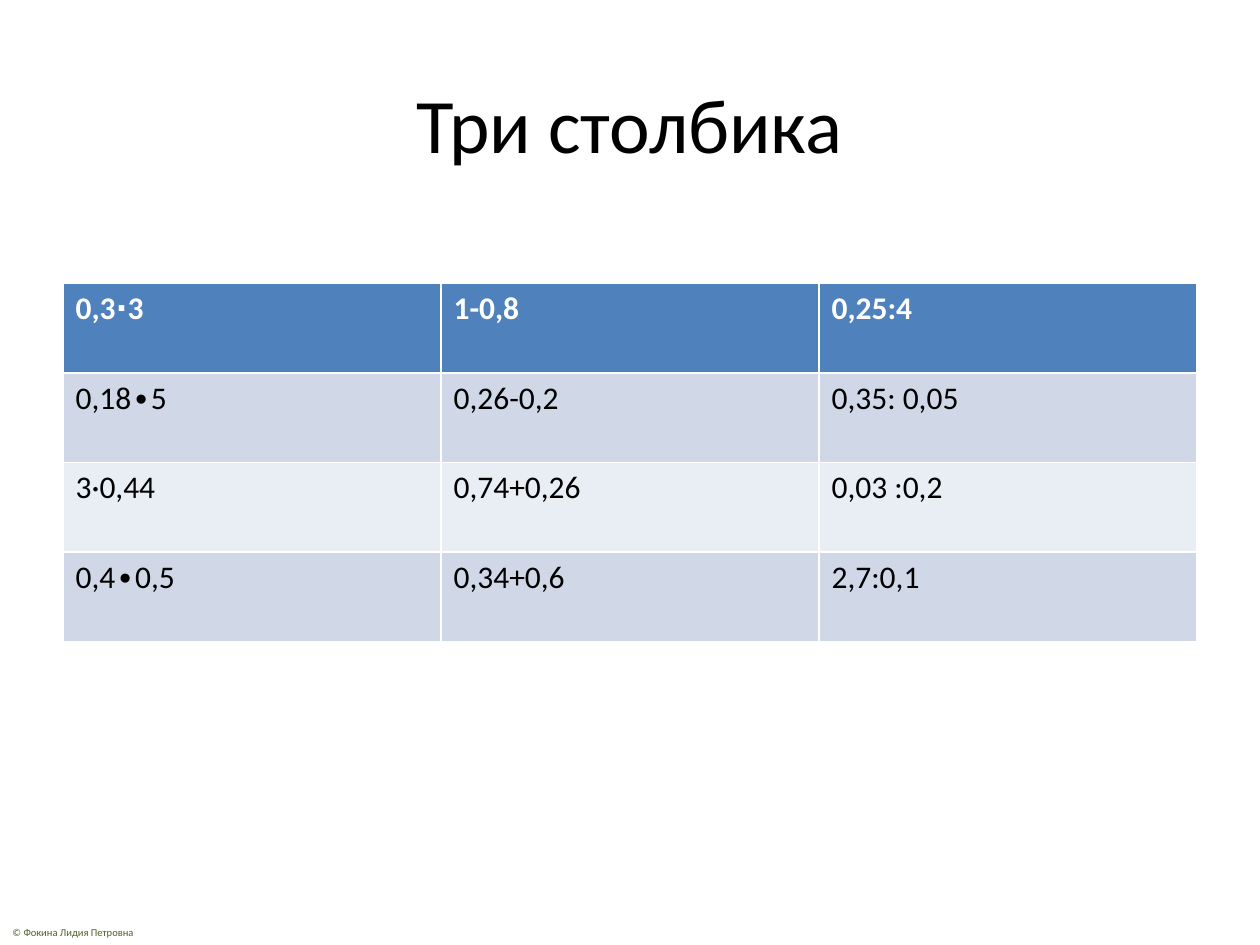
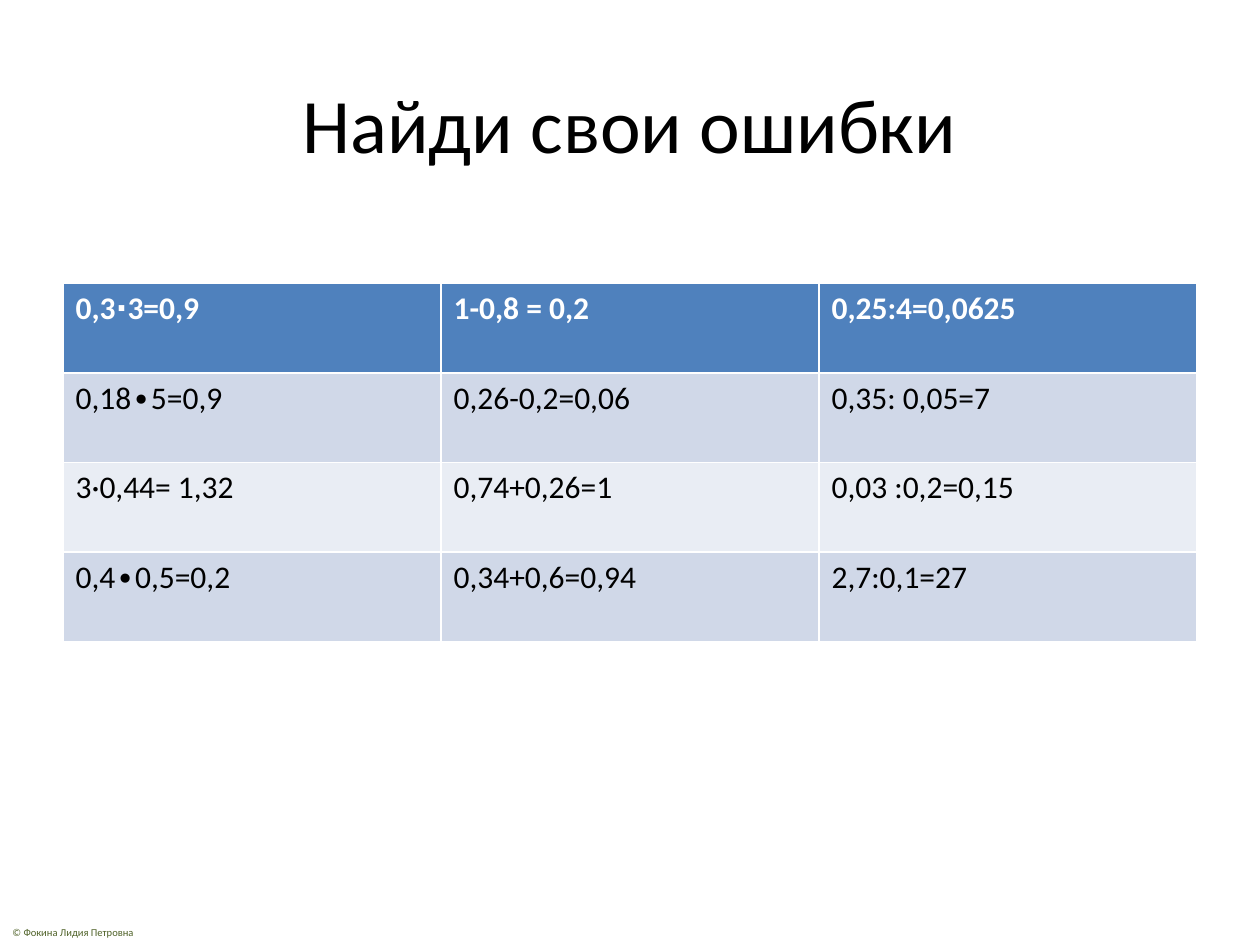
from pptx import Presentation
from pptx.dml.color import RGBColor
from pptx.enum import text as t
from pptx.util import Inches, Pt

FONT = "Calibri"
HEAD, DARK, PALE = "4F81BD", "D0D8E8", "E9EDF4"
WHITE, BLACK, GREEN = "FFFFFF", "000000", "4F6228"

# Boxes: left, top, width, height
TITLE = (0.5, 0.39, 9, 1.16)
GRID = (0.5, 2.25, 9, 2.84)
FOOT = (0, 7.3, 1.19, 0.2)

TASKS = [
    ["0,3∙3", "1-0,8", "0,25:4"],
    ["0,18∙5", "0,26-0,2", "0,35: 0,05"],
    ["3·0,44", "0,74+0,26", "0,03 :0,2"],
    ["0,4∙0,5", "0,34+0,6", "2,7:0,1"],
]
ANSWERS = [
    ["=0,9", " = 0,2", "=0,0625"],
    ["=0,9", "=0,06", "=7"],
    ["= 1,32", "=1", "=0,15"],
    ["=0,2", "=0,94", "=27"],
]


def color(code):
    return RGBColor.from_string(code)


def style(para, size, code, bold=False):
    font = para.font
    font.name, font.size, font.bold = FONT, Pt(size), bold
    font.color.rgb = color(code)


def add_title(slide, box, words):
    title = slide.shapes.title
    title.left, title.top, title.width, title.height = map(Inches, box)
    frame = title.text_frame
    frame.text = words
    frame.vertical_anchor = t.MSO_ANCHOR.MIDDLE
    para = frame.paragraphs[0]
    para.alignment = t.PP_ALIGN.CENTER
    style(para, 44, BLACK)


def add_grid(slide, box, rows):
    # The default table style draws the white rules between cells
    count, width = len(rows), len(rows[0])
    table = slide.shapes.add_table(count, width, *map(Inches, box)).table
    for col in table.columns:
        col.width = Inches(box[2] / width)
    for i, row in enumerate(rows):
        table.rows[i].height = Inches(box[3] / count)
        fill = HEAD if i == 0 else DARK if i % 2 else PALE
        for j, words in enumerate(row):
            cell = table.cell(i, j)
            cell.text = words
            cell.fill.solid()
            cell.fill.fore_color.rgb = color(fill)
            style(cell.text_frame.paragraphs[0], 18,
                  BLACK if i else WHITE, i == 0)


def add_foot(slide, box):
    frame = slide.shapes.add_textbox(*map(Inches, box)).text_frame
    frame.text = "© Фокина Лидия Петровна"
    frame.word_wrap = False
    frame.vertical_anchor = t.MSO_ANCHOR.MIDDLE
    style(frame.paragraphs[0], 6, GREEN)


def add_page(deck, title, rows):
    slide = deck.slides.add_slide(deck.slide_layouts[5])
    add_foot(slide, FOOT)
    add_title(slide, TITLE, title)
    add_grid(slide, GRID, rows)


def main():
    deck = Presentation()
    deck.slide_width, deck.slide_height = Inches(10), Inches(7.5)
    solved = [[task + answer for task, answer in zip(*pair)]
              for pair in zip(TASKS, ANSWERS)]
    add_page(deck, "Три столбика", TASKS)
    add_page(deck, "Найди свои ошибки", solved)
    deck.save("out.pptx")


if __name__ == "__main__":
    main()
